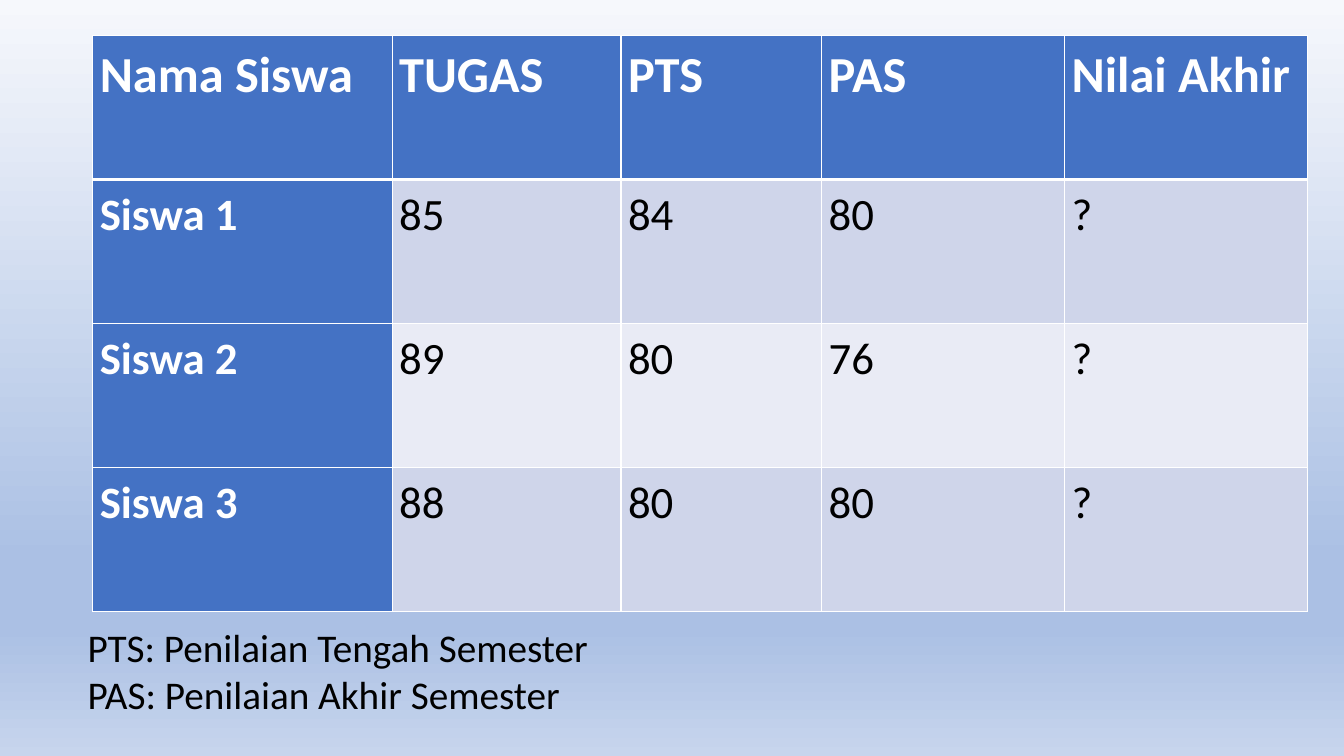
from lxml import etree
from pptx import Presentation
from pptx.dml.color import RGBColor
from pptx.enum.text import MSO_AUTO_SIZE, PP_ALIGN
from pptx.oxml.ns import qn
from pptx.util import Inches, Pt

# Content
GRADES = [
    ("Nama Siswa", "TUGAS", "PTS", "PAS", "Nilai Akhir"),
    ("Siswa 1", "85", "84", "80", "?"),
    ("Siswa 2", "89", "80", "76", "?"),
    ("Siswa 3", "88", "80", "80", "?"),
]
LEGEND = ["PTS: Penilaian Tengah Semester", "PAS: Penilaian Akhir Semester"]

# Layout and style
COLUMN_WIDTHS = [2.97, 2.27, 1.99, 2.41, 2.41]
ROW_HEIGHT = 1.43
FONT = "Calibri"
BLACK = RGBColor(0x00, 0x00, 0x00)
WHITE = RGBColor(0xFF, 0xFF, 0xFF)
BLUE = RGBColor(0x44, 0x72, 0xC4)
BAND_DARK = RGBColor(0xCF, 0xD5, 0xEA)
BAND_LIGHT = RGBColor(0xE9, 0xEB, 0xF5)
BACKGROUND_STOPS = [
    (0, RGBColor(0xF6, 0xF8, 0xFC)),
    (74, RGBColor(0xAB, 0xC0, 0xE4)),
    (83, RGBColor(0xAB, 0xC0, 0xE4)),
    (100, RGBColor(0xC7, 0xD5, 0xED)),
]


def add_color(parent, color):
    etree.SubElement(parent, qn("a:srgbClr"), val=str(color))


def set_background(slide):
    fill = slide.background.fill
    fill.gradient()
    fill.gradient_angle = 270
    stop_list = slide.background._cSld.find(".//" + qn("a:gsLst"))
    for stop in list(stop_list):
        stop_list.remove(stop)
    for percent, color in BACKGROUND_STOPS:
        add_color(etree.SubElement(stop_list, qn("a:gs"), pos=str(percent * 1000)), color)


def set_borders(cell, top, bottom):
    properties = cell._tc.get_or_add_tcPr()
    widths = [("a:lnL", 1), ("a:lnR", 1), ("a:lnT", top), ("a:lnB", bottom)]
    for index, (tag, width) in enumerate(widths):
        line = etree.Element(qn(tag), w=str(Pt(width)))
        add_color(etree.SubElement(line, qn("a:solidFill")), WHITE)
        properties.insert(index, line)


def style_font(paragraph, size, color, bold=False):
    for run in paragraph.runs:
        run.font.name = FONT
        run.font.size = Pt(size)
        run.font.bold = bold
        run.font.color.rgb = color


def fill_cell(cell, text, row, column):
    heading = row == 0 or column == 0
    cell.margin_left = cell.margin_right = Inches(0.07)
    cell.margin_top = cell.margin_bottom = 0
    cell.fill.solid()
    cell.fill.fore_color.rgb = BLUE if heading else BAND_DARK if row % 2 else BAND_LIGHT
    set_borders(cell, top=3 if row == 1 else 1, bottom=3 if row == 0 else 1)
    cell.text_frame.text = text
    paragraph = cell.text_frame.paragraphs[0]
    paragraph.alignment = PP_ALIGN.JUSTIFY
    paragraph.line_spacing = 1.15
    paragraph.space_after = Pt(8)
    style_font(paragraph, 36 if row == 0 else 32, WHITE if heading else BLACK, heading)


presentation = Presentation()
presentation.slide_width = Inches(13.33)
presentation.slide_height = Inches(7.5)
slide = presentation.slides.add_slide(presentation.slide_layouts[6])
set_background(slide)

# Grade table
table = slide.shapes.add_table(
    len(GRADES), len(COLUMN_WIDTHS), Inches(0.92), Inches(0.35),
    Inches(sum(COLUMN_WIDTHS)), Inches(ROW_HEIGHT * len(GRADES)),
).table
table.first_col = True
for column, width in zip(table.columns, COLUMN_WIDTHS):
    column.width = Inches(width)
for row, values in enumerate(GRADES):
    table.rows[row].height = Inches(ROW_HEIGHT)
    for column, text in enumerate(values):
        fill_cell(table.cell(row, column), text, row, column)

# Legend
legend = slide.shapes.add_textbox(Inches(0.77), Inches(6.13), Inches(5.21), Inches(1.04))
legend.text_frame.word_wrap = False
legend.text_frame.auto_size = MSO_AUTO_SIZE.SHAPE_TO_FIT_TEXT
legend.text_frame.text = "\n".join(LEGEND)
for paragraph in legend.text_frame.paragraphs:
    style_font(paragraph, 28, BLACK)

presentation.save("out.pptx")
